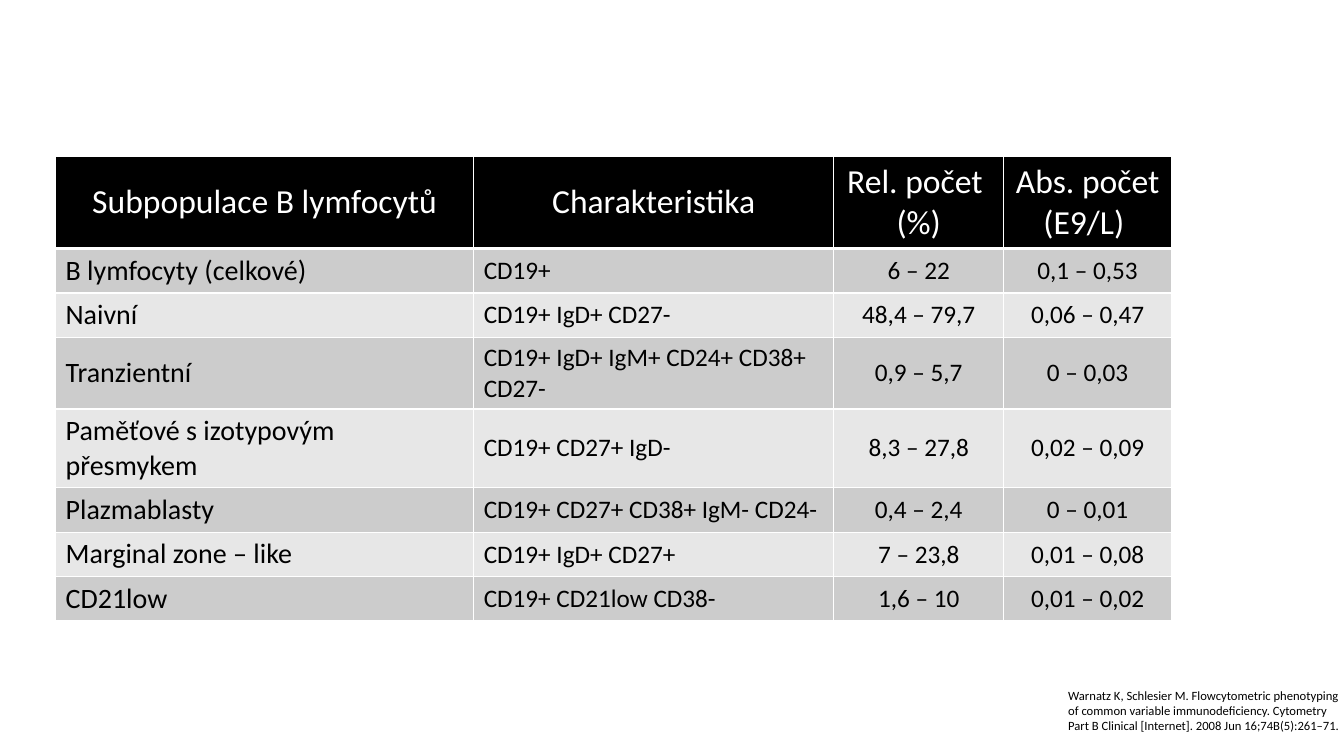
from lxml.etree import SubElement
from pptx import Presentation
from pptx.dml.color import RGBColor
from pptx.enum.text import MSO_ANCHOR, PP_ALIGN
from pptx.oxml.ns import qn
from pptx.util import Cm, Pt

BLACK = RGBColor(0x00, 0x00, 0x00)
WHITE = RGBColor(0xFF, 0xFF, 0xFF)
DARK = RGBColor(0xCC, 0xCC, 0xCC)
LIGHT = RGBColor(0xE7, 0xE7, 0xE7)
FONT = "Calibri"

HEAD = ["Subpopulace B lymfocytů", "Charakteristika",
        "Rel. počet \n(%)", "Abs. počet\n(E9/L) "]
ROWS = [
    ["B lymfocyty (celkové)", "CD19+", "6 – 22", "0,1 – 0,53"],
    ["Naivní", "CD19+ IgD+ CD27-", "48,4 – 79,7", "0,06 – 0,47"],
    ["Tranzientní", "CD19+ IgD+ IgM+ CD24+ CD38+ CD27-", "0,9 – 5,7", "0 – 0,03"],
    ["Paměťové s izotypovým přesmykem", "CD19+ CD27+ IgD-", "8,3 – 27,8", "0,02 – 0,09"],
    ["Plazmablasty", "CD19+ CD27+ CD38+ IgM- CD24-", "0,4 – 2,4", "0 – 0,01"],
    ["Marginal zone – like", "CD19+ IgD+ CD27+", "7 – 23,8", "0,01 – 0,08"],
    ["CD21low", "CD19+ CD21low CD38-", "1,6 – 10", "0,01 – 0,02"],
]
WIDTHS = [10.54, 9.07, 4.29, 4.22]
HEIGHTS = [2.16, 1.12, 1.12, 1.12, 1.24, 1.12, 1.12, 1.12]
SIZES = [20, 18, 18, 18]
NOTE = ("Warnatz K, Schlesier M. Flowcytometric phenotyping of common variable "
        "immunodeficiency. Cytometry Part B Clinical [Internet]. "
        "2008 Jun 16;74B(5):261–71.")


def style(frame, size, color, align):
    for para in frame.paragraphs:
        para.alignment = align
        font = para.font
        font.name, font.size, font.bold = FONT, Pt(size), False
        font.color.rgb = color


def edge(cell):
    """White lines around a header cell, thick at the bottom."""
    props = cell._tc.get_or_add_tcPr()
    for side, width in (("L", 1), ("R", 1), ("T", 1), ("B", 3)):
        line = SubElement(props, qn("a:ln" + side), w=str(Pt(width)))
        fill = SubElement(line, qn("a:solidFill"))
        SubElement(fill, qn("a:srgbClr"), val=str(WHITE))


def add_counts(slide, left, top, width, height):
    grid = [HEAD] + ROWS
    table = slide.shapes.add_table(len(grid), len(HEAD), left, top, width, height).table
    for col, size in zip(table.columns, WIDTHS):
        col.width = Cm(size)
    for row, size in zip(table.rows, HEIGHTS):
        row.height = Cm(size)

    for i, texts in enumerate(grid):
        for j, text in enumerate(texts):
            cell = table.cell(i, j)
            cell.text = text
            cell.vertical_anchor = MSO_ANCHOR.MIDDLE
            if i == 0:
                edge(cell)
                shade, color, size = BLACK, WHITE, 24
            else:
                shade, color, size = (DARK if i % 2 else LIGHT), BLACK, SIZES[j]
            cell.fill.solid()
            cell.fill.fore_color.rgb = shade
            center = i == 0 or j > 1
            style(cell.text_frame, size, color,
                  PP_ALIGN.CENTER if center else PP_ALIGN.LEFT)


def add_source(slide, left, top, width, height):
    frame = slide.shapes.add_textbox(left, top, width, height).text_frame
    frame.word_wrap = True
    frame.text = NOTE
    style(frame, 9, BLACK, PP_ALIGN.LEFT)


def main():
    deck = Presentation()
    deck.slide_width, deck.slide_height = Cm(33.87), Cm(19.05)
    slide = deck.slides.add_slide(deck.slide_layouts[6])
    # Table of B cell subsets
    add_counts(slide, Cm(1.4), Cm(3.94), Cm(sum(WIDTHS)), Cm(sum(HEIGHTS)))
    # Citation
    add_source(slide, Cm(26.67), Cm(17.2), Cm(7.59), Cm(1.42))
    deck.save("out.pptx")


if __name__ == "__main__":
    main()
